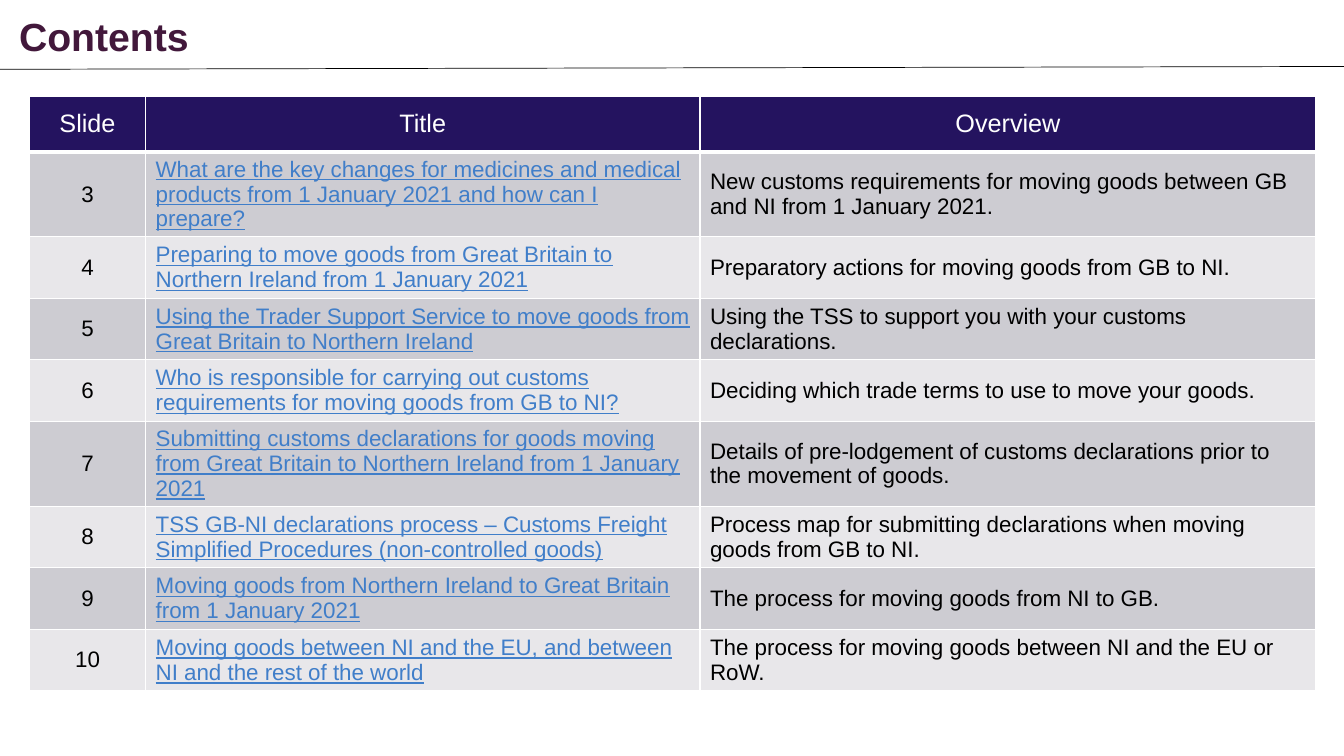
from lxml import etree
from pptx import Presentation
from pptx.dml.color import RGBColor
from pptx.enum import shapes, text
from pptx.oxml import ns
from pptx.util import Pt

NAVY, PLUM, LINK = "24135F", "42183B", "407EC9"
BLACK, WHITE = "000000", "FFFFFF"
BANDS = ("CDCCD2", "E8E7EA")
COLUMN_WIDTHS = (83, 396, 440)
ROW_HEIGHTS = (40, 40) + (44,) * 7
FIRST_SLIDE = 3

HEADINGS = ("Slide", "Title", "Overview")
CONTENTS = (
    ("What are the key changes for medicines and medical products from 1 January 2021 and how can I prepare?",
     "New customs requirements for moving goods between GB and NI from 1 January 2021."),
    ("Preparing to move goods from Great Britain to Northern Ireland from 1 January 2021",
     "Preparatory actions for moving goods from GB to NI."),
    ("Using the Trader Support Service to move goods from Great Britain to Northern Ireland",
     "Using the TSS to support you with your customs declarations."),
    ("Who is responsible for carrying out customs requirements for moving goods from GB to NI?",
     "Deciding which trade terms to use to move your goods."),
    ("Submitting customs declarations for goods moving from Great Britain to Northern Ireland from 1 January 2021",
     "Details of pre-lodgement of customs declarations prior to the movement of goods."),
    ("TSS GB-NI declarations process – Customs Freight Simplified Procedures (non-controlled goods)",
     "Process map for submitting declarations when moving goods from GB to NI."),
    ("Moving goods from Northern Ireland to Great Britain from 1 January 2021",
     "The process for moving goods from NI to GB."),
    ("Moving goods between NI and the EU, and between NI and the rest of the world",
     "The process for moving goods between NI and the EU or RoW."),
)

HEADING_FORMAT = {"size": Pt(18)}
BODY_FORMAT = {"size": Pt(16)}
LINK_FORMAT = {"size": Pt(16), "underline": True}


def colour(hex_value):
    return RGBColor.from_string(hex_value)


def write(paragraph, wording, ink, font_format):
    paragraph.text = wording
    font = paragraph.font
    font.name = "Arial"
    font.color.rgb = colour(ink)
    for name, value in font_format.items():
        setattr(font, name, value)


def add_borders(cell, bottom_width):
    """Put white lines round the cell, ahead of its fill in the cell properties."""
    properties = cell._tc.get_or_add_tcPr()
    for index, side in enumerate(("lnL", "lnR", "lnT", "lnB")):
        width = bottom_width if side == "lnB" else 1
        border = etree.Element(ns.qn(f"a:{side}"), w=str(Pt(width)))
        fill = etree.SubElement(border, ns.qn("a:solidFill"))
        etree.SubElement(fill, ns.qn("a:srgbClr"), val=WHITE)
        properties.insert(index, border)


def fill_cell(cell, wording, ink, background, font_format, centred, bottom_width=1):
    cell.fill.solid()
    cell.fill.fore_color.rgb = colour(background)
    cell.vertical_anchor = text.MSO_ANCHOR.MIDDLE
    paragraph = cell.text_frame.paragraphs[0]
    write(paragraph, wording, ink, font_format)
    paragraph.alignment = text.PP_ALIGN.CENTER if centred else text.PP_ALIGN.LEFT
    add_borders(cell, bottom_width)


def add_heading(slide, wording):
    heading = slide.shapes.add_textbox(Pt(6.5), Pt(5), Pt(423), Pt(41))
    heading.text_frame.word_wrap = True
    write(heading.text_frame.paragraphs[0], wording, PLUM, {"size": Pt(28), "bold": True})


def add_rule(slide):
    rule = slide.shapes.add_connector(shapes.MSO_CONNECTOR.STRAIGHT, 0, Pt(49.5), Pt(960), Pt(47.5))
    rule.line.color.rgb = colour(BLACK)
    rule.line.width = Pt(0.5)
    etree.SubElement(rule._element.spPr, ns.qn("a:effectLst"))


def add_contents_table(slide):
    table = slide.shapes.add_table(
        len(ROW_HEIGHTS), len(COLUMN_WIDTHS),
        Pt(21), Pt(68.5), Pt(sum(COLUMN_WIDTHS)), Pt(sum(ROW_HEIGHTS))).table
    for column, width in zip(table.columns, COLUMN_WIDTHS):
        column.width = Pt(width)
    for row, height in zip(table.rows, ROW_HEIGHTS):
        row.height = Pt(height)

    for column, heading in enumerate(HEADINGS):
        fill_cell(table.cell(0, column), heading, WHITE, NAVY, HEADING_FORMAT, True, 3)
    for index, (title, overview) in enumerate(CONTENTS):
        number, link, summary = table.rows[index + 1].cells
        band = BANDS[index % 2]
        fill_cell(number, str(FIRST_SLIDE + index), BLACK, band, BODY_FORMAT, True)
        fill_cell(link, title, LINK, band, LINK_FORMAT, False)
        fill_cell(summary, overview, BLACK, band, BODY_FORMAT, False)


def main():
    deck = Presentation()
    deck.slide_width, deck.slide_height = Pt(960), Pt(540)
    slide = deck.slides.add_slide(deck.slide_layouts[6])
    add_contents_table(slide)
    add_heading(slide, "Contents")
    add_rule(slide)
    deck.save("out.pptx")


if __name__ == "__main__":
    main()
